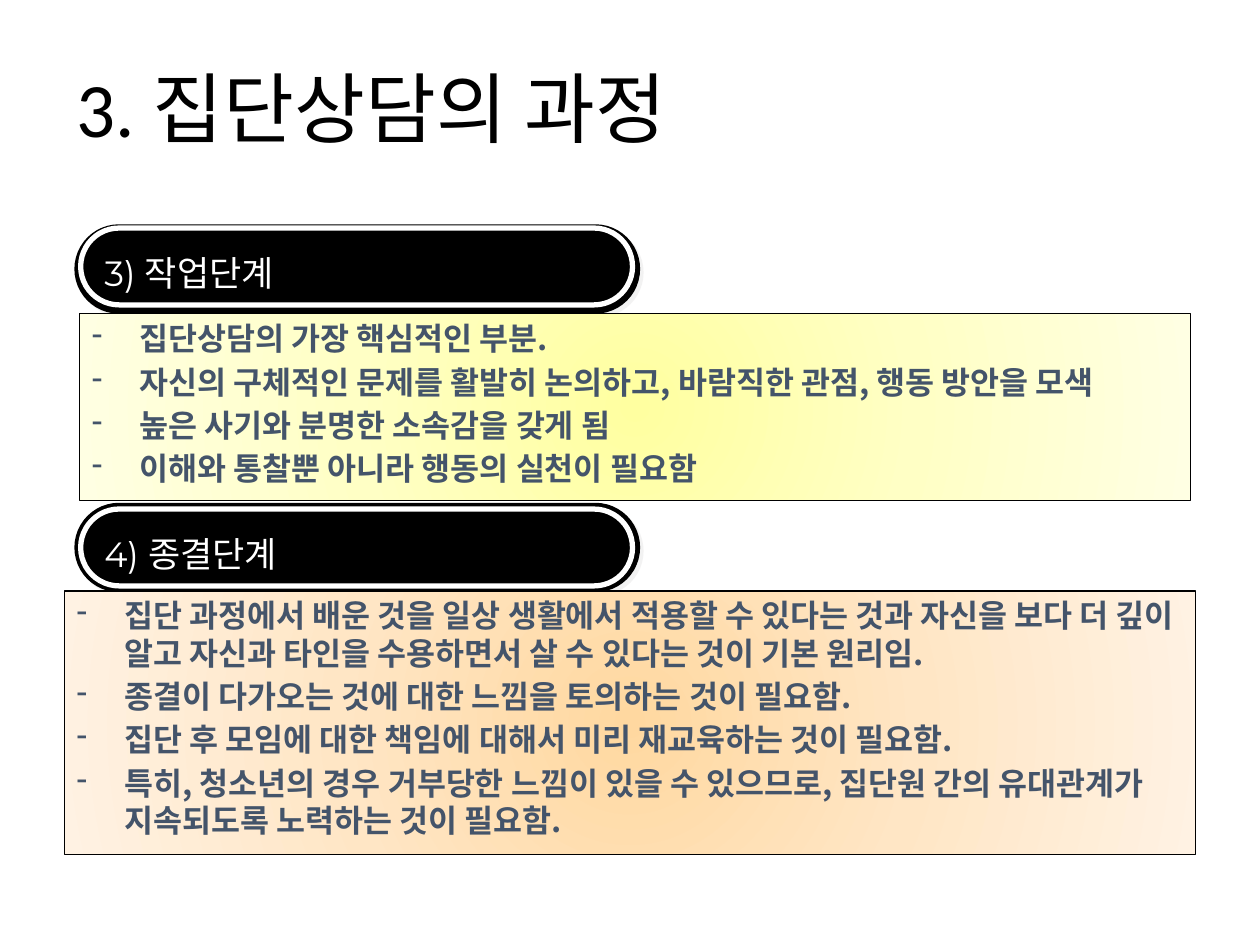
import dataclasses

import lxml.etree
import pptx
import pptx.dml.color
import pptx.enum.shapes
import pptx.enum.text
import pptx.oxml
import pptx.oxml.ns
import pptx.util

Inches = pptx.util.Inches
Pt = pptx.util.Pt
SHAPES = pptx.enum.shapes.MSO_SHAPE
ANCHOR = pptx.enum.text.MSO_ANCHOR
LEFT = pptx.enum.text.PP_ALIGN.LEFT


@dataclasses.dataclass(frozen=True)
class Theme:
    """Colours, fonts and type sizes of the slide."""
    black: str = "000000"
    white: str = "FFFFFF"
    body: str = "44546A"
    shadow: str = "E7E6E6"
    yellow: tuple = ("FFFFA0", "FFFFC5", "FFFFE3")
    orange: tuple = ("FFD8A0", "FFE6C5", "FFF2E3")
    title_font: str = "Calibri"
    stage_font: str = "Montserrat"
    korean_font: str = "Noto Sans CJK KR"
    title_size: int = 44
    stage_size: int = 20
    body_size: int = 18


THEME = Theme()
WORKING = (
    "집단상담의 가장 핵심적인 부분.",
    "자신의 구체적인 문제를 활발히 논의하고, 바람직한 관점, 행동 방안을 모색",
    "높은 사기와 분명한 소속감을 갖게 됨",
    "이해와 통찰뿐 아니라 행동의 실천이 필요함",
)
CLOSING = (
    "집단 과정에서 배운 것을 일상 생활에서 적용할 수 있다는 것과 자신을 보다 더 "
    "깊이 알고 자신과 타인을 수용하면서 살 수 있다는 것이 기본 원리임.",
    "종결이 다가오는 것에 대한 느낌을 토의하는 것이 필요함.",
    "집단 후 모임에 대한 책임에 대해서 미리 재교육하는 것이 필요함.",
    "특히, 청소년의 경우 거부당한 느낌이 있을 수 있으므로, 집단원 간의 "
    "유대관계가 지속되도록 노력하는 것이 필요함.",
)


def rgb(value):
    """Turn a hex string into a colour."""
    return pptx.dml.color.RGBColor.from_string(value)


def drawing_xml(xml):
    """Parse a DrawingML fragment whose root lacks the namespace."""
    tag, rest = xml.split(">", 1)
    return pptx.oxml.parse_xml(f"{tag} {pptx.oxml.ns.nsdecls('a')}>{rest}")


def add_run(paragraph, text, font, size, color, bold=False):
    """Add one formatted run with a Latin and a Korean typeface."""
    run = paragraph.add_run()
    run.text = text
    run.font.name = font
    run.font.size = Pt(size)
    run.font.bold = bold
    run.font.color.rgb = rgb(color)
    korean = lxml.etree.SubElement(run.font._element, pptx.oxml.ns.qn("a:ea"))
    korean.set("typeface", THEME.korean_font)


def place_title(slide, box, text):
    """Move and fill the title placeholder."""
    title = slide.shapes.title
    title.left, title.top, title.width, title.height = map(Inches, box)
    title.text_frame.vertical_anchor = ANCHOR.MIDDLE
    paragraph = title.text_frame.paragraphs[0]
    paragraph.alignment = LEFT
    paragraph.line_spacing = 0.9
    add_run(paragraph, text, THEME.title_font, THEME.title_size, THEME.black)


def add_pill(group, box):
    """Add a black pill shape to a group."""
    pill = group.shapes.add_shape(SHAPES.ROUNDED_RECTANGLE, *map(Inches, box))
    pill.adjustments[0] = 0.5
    pill.shadow.inherit = False
    pill.fill.solid()
    pill.fill.fore_color.rgb = rgb(THEME.black)
    return pill


def add_stage(slide, box, inner_top, text):
    """Add a stage heading: a shadowed pill with a white-rimmed pill inside."""
    left, top, width, height = box
    group = slide.shapes.add_group_shape()
    rim = add_pill(group, box)
    rim.line.fill.background()
    effects = rim._element.spPr.find(pptx.oxml.ns.qn("a:effectLst"))
    effects.append(drawing_xml(
        f'<a:outerShdw blurRad="0" dist="{Pt(2.8)}" dir="2700000" algn="ctr" rotWithShape="0">'
        f'<a:srgbClr val="{THEME.shadow}"><a:alpha val="50000"/></a:srgbClr></a:outerShdw>'))

    heading = add_pill(group, (left + 0.05, inner_top, width - 0.11, height - 0.1))
    heading.line.color.rgb = rgb(THEME.white)
    heading.line.width = Pt(3)
    frame = heading.text_frame
    frame.word_wrap = True
    frame.vertical_anchor = ANCHOR.MIDDLE
    paragraph = frame.paragraphs[0]
    paragraph.alignment = LEFT
    paragraph.line_spacing = 1.3
    add_run(paragraph, text, THEME.stage_font, THEME.stage_size, THEME.white)


def add_panel(slide, box, colors, points):
    """Add a radially shaded panel with a dashed list."""
    panel = slide.shapes.add_shape(SHAPES.RECTANGLE, *map(Inches, box))
    panel.shadow.inherit = False
    stops = "".join(
        f'<a:gs pos="{i * 50000}"><a:srgbClr val="{color}"/></a:gs>'
        for i, color in enumerate(colors))
    panel._element.spPr.insert(2, drawing_xml(
        f'<a:gradFill rotWithShape="1"><a:gsLst>{stops}</a:gsLst><a:path path="circle">'
        '<a:fillToRect l="50000" t="50000" r="50000" b="50000"/></a:path></a:gradFill>'))
    panel.line.color.rgb = rgb(THEME.black)
    panel.line.width = Pt(0.75)

    frame = panel.text_frame
    frame.word_wrap = True
    frame.vertical_anchor = ANCHOR.TOP
    for i, point in enumerate(points):
        paragraph = frame.add_paragraph() if i else frame.paragraphs[0]
        paragraph.alignment = LEFT
        paragraph.line_spacing = Pt(21.2)
        paragraph.space_before = Pt(THEME.body_size * 0.2)
        properties = paragraph._p.get_or_add_pPr()
        properties.set("marL", str(Inches(0.38)))
        properties.set("indent", str(-Inches(0.38)))
        properties.append(drawing_xml('<a:buFontTx></a:buFontTx>'))
        properties.append(drawing_xml('<a:buChar char="-"></a:buChar>'))
        add_run(paragraph, point, THEME.korean_font, THEME.body_size, THEME.body, True)


def main():
    """Build the slide and save it."""
    deck = pptx.Presentation()
    deck.slide_width, deck.slide_height = Inches(10), Inches(7.5)
    slide = deck.slides.add_slide(deck.slide_layouts[5])
    place_title(slide, (0.51, 0.17, 8.62, 1.45), "3. 집단상담의 과정")
    add_stage(slide, (0.59, 1.78, 4.49, 0.71), 1.81, "3) 작업단계")
    add_stage(slide, (0.59, 3.99, 4.49, 0.71), 4.04, "4) 종결단계")
    add_panel(slide, (0.51, 4.69, 8.98, 2.09), THEME.orange, CLOSING)
    add_panel(slide, (0.63, 2.49, 8.82, 1.48), THEME.yellow, WORKING)
    deck.save("out.pptx")


if __name__ == "__main__":
    main()
